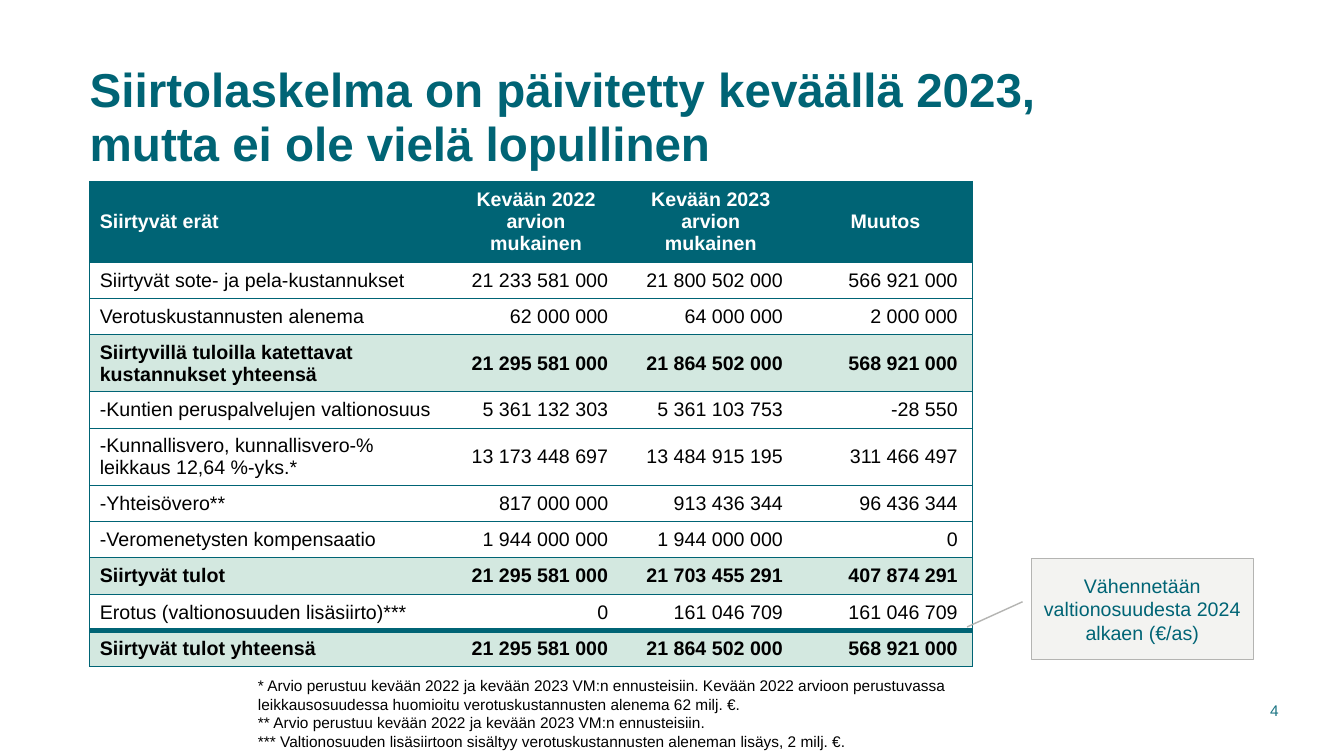
from lxml.etree import SubElement
from pptx import Presentation
from pptx.dml.color import RGBColor
from pptx.enum.shapes import MSO_SHAPE as Preset
from pptx.enum.text import MSO_ANCHOR as Anchor, PP_ALIGN as Align
from pptx.oxml.ns import qn
from pptx.util import Inches, Pt

TEAL = RGBColor(0x00, 0x64, 0x75)
PAGE_TEAL = RGBColor(0x1A, 0x74, 0x83)
MINT = RGBColor(0xD3, 0xE8, 0xE0)
PALE = RGBColor(0xF3, 0xF3, 0xF1)
GREY = RGBColor(0xB4, 0xB4, 0xB2)
BLACK = RGBColor(0x00, 0x00, 0x00)
WHITE = RGBColor(0xFF, 0xFF, 0xFF)

deck = Presentation()
deck.slide_width, deck.slide_height = Inches(13.33), Inches(7.5)
page = deck.slides.add_slide(deck.slide_layouts[6])


def grid(*steps):
    return [round(deck.slide_height * step / 22.5) for step in steps]


def write(para, text, size, color, bold=False, align=Align.LEFT):
    para.alignment = align
    for number, line in enumerate(text.split("\n")):
        if number:
            para.add_line_break()
        span = para.add_run()
        span.text = line
        span.font.name = "Arial"
        span.font.size = Pt(size)
        span.font.bold = bold
        span.font.color.rgb = color


title = page.shapes.add_textbox(*grid(2.67, 1.74, 28.59, 3.54)).text_frame
title.word_wrap = True
title.vertical_anchor = Anchor.MIDDLE
title.margin_left = title.margin_right = 0
title.paragraphs[0].line_spacing = 0.95
write(title.paragraphs[0],
      "Siirtolaskelma on päivitetty keväällä 2023,\nmutta ei ole vielä lopullinen",
      34, TEAL, True)

rows = [
    ("Siirtyvät erät", "Kevään 2022 arvion mukainen", "Kevään 2023 arvion mukainen", "Muutos"),
    ("Siirtyvät sote- ja pela-kustannukset", "21 233 581 000", "21 800 502 000", "566 921 000"),
    ("Verotuskustannusten alenema", "62 000 000", "64 000 000", "2 000 000"),
    ("Siirtyvillä tuloilla katettavat kustannukset yhteensä",
     "21 295 581 000", "21 864 502 000", "568 921 000"),
    ("-Kuntien peruspalvelujen valtionosuus", "5 361 132 303", "5 361 103 753", "-28 550"),
    ("-Kunnallisvero, kunnallisvero-% leikkaus 12,64 %-yks.*",
     "13 173 448 697", "13 484 915 195", "311 466 497"),
    ("-Yhteisövero**", "817 000 000", "913 436 344", "96 436 344"),
    ("-Veromenetysten kompensaatio", "1 944 000 000", "1 944 000 000", "0"),
    ("Siirtyvät tulot", "21 295 581 000", "21 703 455 291", "407 874 291"),
    ("Erotus (valtionosuuden lisäsiirto)***", "0", "161 046 709", "161 046 709"),
    ("Siirtyvät tulot yhteensä", "21 295 581 000", "21 864 502 000", "568 921 000"),
]
sum_rows = (3, 8, 10)
last_row, last_column = len(rows) - 1, len(rows[0]) - 1

table = page.shapes.add_table(len(rows), len(rows[0]), *grid(2.67, 5.4, 26.28, 12.8)).table
table.horz_banding = False
for column, width in zip(table.columns, grid(10.68, 5.2, 5.2, 5.2)):
    column.width = width
for row, height in zip(table.rows, grid(2, *[1.08] * last_row)):
    row.height = height

for row_index, texts in enumerate(rows):
    heading = row_index == 0
    total = row_index in sum_rows
    for column_index, text in enumerate(texts):
        cell = table.cell(row_index, column_index)
        cell.vertical_anchor = Anchor.MIDDLE
        align = Align.LEFT
        if column_index:
            align = Align.CENTER if heading else Align.RIGHT
        if align == Align.RIGHT:
            cell.margin_right = Inches(0.15)
        write(cell.text_frame.paragraphs[0], text, 14, WHITE if heading else BLACK,
              heading or total, align)
        borders = {
            "a:lnL": 1 if column_index == 0 else 0,
            "a:lnR": 1 if column_index == last_column else 0,
            "a:lnT": 4 if row_index == last_row else 1,
            "a:lnB": 4 if row_index == last_row - 1 else 1,
        }
        properties = cell._tc.get_or_add_tcPr()
        for tag, points in borders.items():
            edge = SubElement(properties, qn(tag), w=str(Pt(points)))
            if points:
                paint = SubElement(edge, qn("a:solidFill"))
                SubElement(paint, qn("a:srgbClr"), val=str(TEAL))
            else:
                SubElement(edge, qn("a:noFill"))
        cell.fill.solid()
        cell.fill.fore_color.rgb = TEAL if heading else MINT if total else WHITE

footnotes = [
    "* Arvio perustuu kevään 2022 ja kevään 2023 VM:n ennusteisiin. Kevään 2022 arvioon "
    "perustuvassa leikkausosuudessa huomioitu verotuskustannusten alenema 62 milj. €.",
    "** Arvio perustuu kevään 2022 ja kevään 2023 VM:n ennusteisiin.",
    "*** Valtionosuuden lisäsiirtoon sisältyy verotuskustannusten aleneman lisäys, 2 milj. €.",
]
notes_frame = page.shapes.add_textbox(*grid(7.38, 19.98, 21.57, 2.52)).text_frame
notes_frame.word_wrap = True
for index, footnote in enumerate(footnotes):
    para = notes_frame.add_paragraph() if index else notes_frame.paragraphs[0]
    write(para, footnote, 11, BLACK)

callout = page.shapes.add_shape(Preset.LINE_CALLOUT_1, *grid(30.69, 16.62, 6.6, 3))
callout.shadow.inherit = False
for index, share in enumerate((0.43, -0.04, 0.68, -0.29)):
    callout.adjustments[index] = share
callout.fill.solid()
callout.fill.fore_color.rgb = PALE
callout.line.color.rgb = GREY
callout.line.width = Pt(1)
callout.text_frame.word_wrap = True
callout.text_frame.vertical_anchor = Anchor.MIDDLE
write(callout.text_frame.paragraphs[0], "Vähennetään valtionosuudesta 2024 alkaen (€/as)",
      14, TEAL, align=Align.CENTER)

page_number = page.shapes.add_textbox(*grid(34.71, 20.55, 3.63, 1.2)).text_frame
page_number.word_wrap = True
page_number.vertical_anchor = Anchor.MIDDLE
write(page_number.paragraphs[0], "4", 11, PAGE_TEAL, align=Align.RIGHT)

deck.save("out.pptx")
